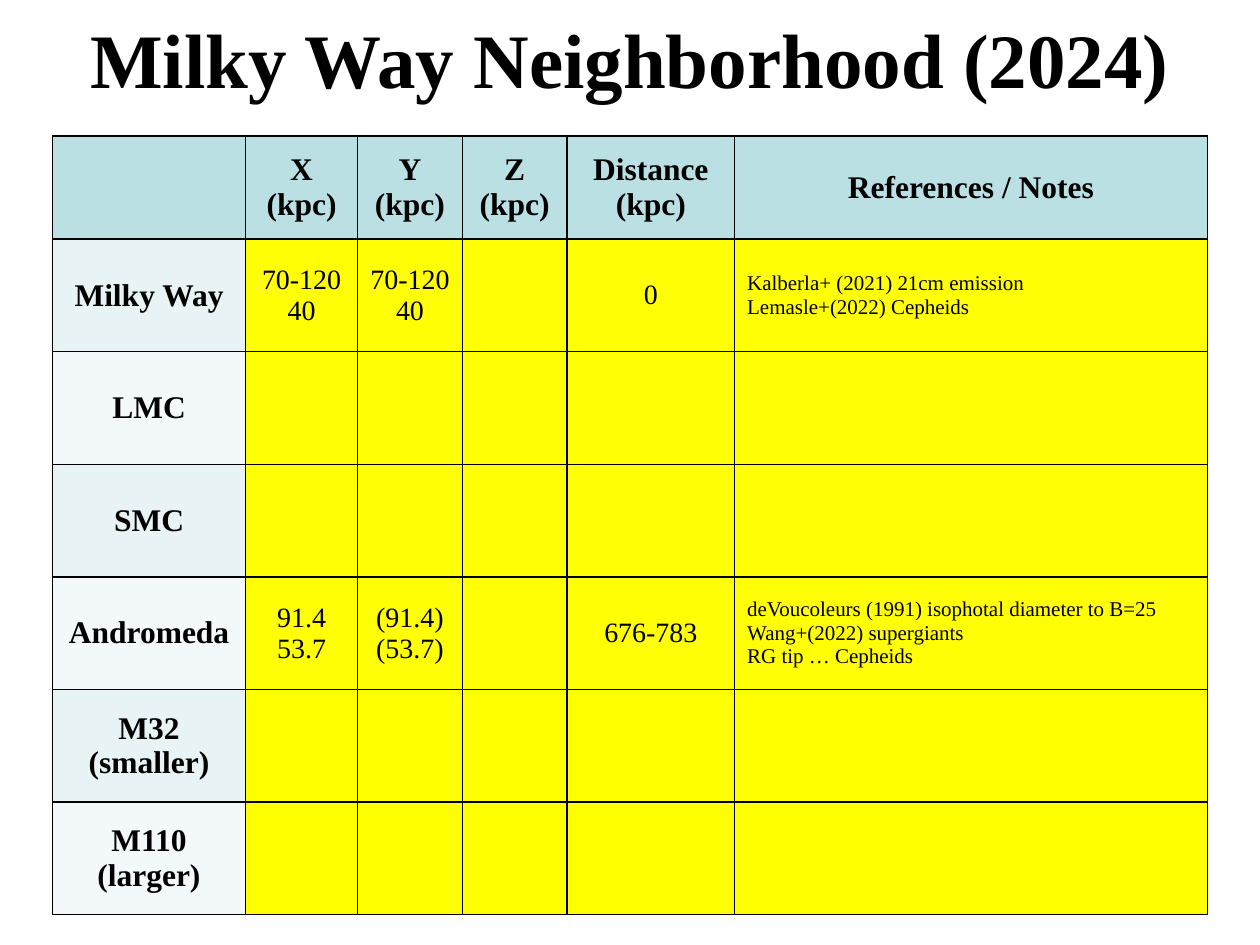
from dataclasses import dataclass

from pptx import Presentation
from pptx import util as u
from pptx.dml import color
from pptx.enum import text
from pptx.oxml import ns, parse_xml
from pptx.slide import Slide
from pptx.table import Table, _Cell


@dataclass(frozen=True)
class Theme:
    font: str = "Times New Roman"
    ink: str = "000000"
    header: str = "BBE0E3"
    bands: tuple[str, str] = ("E7F3F4", "F3F9FA")
    entry: str = "FFFE05"
    pending: str = "FFFF00"
    title_size: int = 44
    label_size: int = 18
    value_size: int = 16
    note_size: int = 12
    border: float = 1


@dataclass(frozen=True)
class Galaxy:
    name: str
    x: str = ""
    y: str = ""
    z: str = ""
    distance: str = ""
    notes: str = ""
    fill: str = Theme.entry

    def values(self) -> list[str]:
        return [self.x, self.y, self.z, self.distance, self.notes]


@dataclass(frozen=True)
class CellStyle:
    fill: str
    size: int
    bold: bool = False
    align: text.PP_ALIGN = text.PP_ALIGN.CENTER


THEME = Theme()
TITLE = "Milky Way Neighborhood (2024)"
HEADERS = ["", "X\n(kpc)", "Y\n(kpc)", "Z\n(kpc)", "Distance (kpc)", "References / Notes"]
GALAXIES = [
    Galaxy("Milky Way", "70-120\n40", "70-120\n40", distance="0",
           notes="Kalberla+ (2021) 21cm emission\nLemasle+(2022) Cepheids"),
    Galaxy("LMC"),
    Galaxy("SMC"),
    Galaxy("Andromeda", "91.4\n53.7", "(91.4)\n(53.7)", distance="676-783",
           notes="deVoucoleurs (1991) isophotal diameter to B=25\n"
                 "Wang+(2022) supergiants\nRG tip … Cepheids"),
    Galaxy("M32\n(smaller)", fill=THEME.pending),
    Galaxy("M110\n(larger)", fill=THEME.pending),
]
COLUMN_WIDTHS = [3.89, 2.26, 2.11, 2.11, 3.38, 9.53]
HEADER_HEIGHT = 2.08
ROW_HEIGHT = 2.27
TABLE_LEFT, TABLE_TOP = 1.06, 2.74


def format_text(frame, size: int, bold: bool, align: text.PP_ALIGN) -> None:
    for para in frame.paragraphs:
        para.alignment = align
        for font in [para.font, *(span.font for span in para.runs)]:
            font.name = THEME.font
            font.size = u.Pt(size)
            font.bold = bold
            font.color.rgb = color.RGBColor.from_string(THEME.ink)


def add_borders(cell: _Cell) -> None:
    properties = cell._tc.get_or_add_tcPr()
    for side in ("lnL", "lnR", "lnT", "lnB"):
        properties.append(parse_xml(
            f'<a:{side} {ns.nsdecls("a")} w="{u.Pt(THEME.border)}">'
            f'<a:solidFill><a:srgbClr val="{THEME.ink}"/></a:solidFill></a:{side}>'
        ))


def fill_cell(cell: _Cell, content: str, style: CellStyle) -> None:
    add_borders(cell)
    cell.fill.solid()
    cell.fill.fore_color.rgb = color.RGBColor.from_string(style.fill)
    cell.vertical_anchor = text.MSO_ANCHOR.MIDDLE
    cell.text_frame.text = content
    format_text(cell.text_frame, style.size, style.bold, style.align)


def fill_galaxy_row(table: Table, row: int, galaxy: Galaxy) -> None:
    label = CellStyle(THEME.bands[(row - 1) % 2], THEME.label_size, bold=True)
    value = CellStyle(galaxy.fill, THEME.value_size)
    note = CellStyle(galaxy.fill, THEME.note_size, align=text.PP_ALIGN.LEFT)
    styles = [label] + [value] * 4 + [note]
    for column, (content, style) in enumerate(zip([galaxy.name, *galaxy.values()], styles)):
        fill_cell(table.cell(row, column), content, style)


def add_title(page: Slide) -> None:
    title = page.shapes.title
    title.left, title.top = u.Cm(0), u.Cm(0)
    title.width, title.height = u.Cm(25.4), u.Cm(2.34)
    frame = title.text_frame
    frame.text = TITLE
    frame.word_wrap = True
    frame.auto_size = text.MSO_AUTO_SIZE.NONE
    frame.vertical_anchor = text.MSO_ANCHOR.MIDDLE
    format_text(frame, THEME.title_size, True, text.PP_ALIGN.CENTER)


def add_galaxy_table(page: Slide) -> None:
    heights = [HEADER_HEIGHT] + [ROW_HEIGHT] * len(GALAXIES)
    table = page.shapes.add_table(
        len(heights), len(COLUMN_WIDTHS), u.Cm(TABLE_LEFT), u.Cm(TABLE_TOP),
        u.Cm(sum(COLUMN_WIDTHS)), u.Cm(sum(heights)),
    ).table
    for column, width in zip(table.columns, COLUMN_WIDTHS):
        column.width = u.Cm(width)
    for row, height in zip(table.rows, heights):
        row.height = u.Cm(height)
    header = CellStyle(THEME.header, THEME.label_size, bold=True)
    for column, content in enumerate(HEADERS):
        fill_cell(table.cell(0, column), content, header)
    for row, galaxy in enumerate(GALAXIES, start=1):
        fill_galaxy_row(table, row, galaxy)


def main() -> None:
    deck = Presentation()
    deck.slide_width, deck.slide_height = u.Cm(25.4), u.Cm(19.05)
    page = deck.slides.add_slide(deck.slide_layouts.get_by_name("Title Only"))
    add_title(page)
    add_galaxy_table(page)
    deck.save("out.pptx")


if __name__ == "__main__":
    main()
